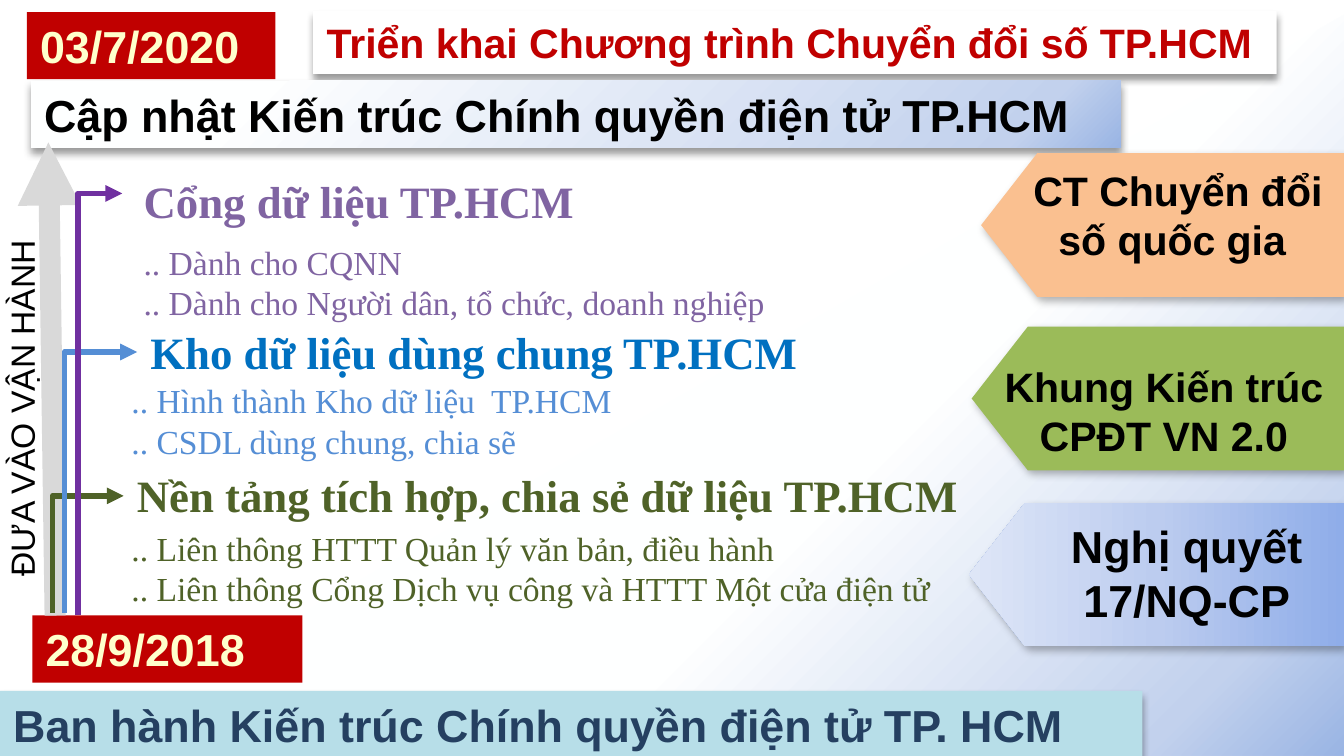
from dataclasses import dataclass

from lxml.etree import SubElement
from pptx import Presentation
from pptx.dml.color import RGBColor
from pptx.enum.shapes import MSO_CONNECTOR as CONNECTOR, MSO_SHAPE as SHAPE
from pptx.enum.text import MSO_ANCHOR as ANCHOR, MSO_AUTO_SIZE as AUTO_SIZE, PP_ALIGN as ALIGN
from pptx.oxml.ns import qn
from pptx.util import Inches, Pt

SLIDE_WIDTH = 10
SLIDE_HEIGHT = SLIDE_WIDTH * 9 / 16


@dataclass(frozen=True)
class Theme:
    sans: str = "Arial"
    serif: str = "Times New Roman"
    large: int = 24
    medium: int = 22
    small: int = 18
    black: str = "000000"
    white: str = "FFFFFF"
    red: str = "C00000"
    cream: str = "FFFFCC"
    navy: str = "254061"
    aqua: str = "B7DEE8"
    gray: str = "D9D9D9"
    purple: str = "8064A2"
    violet: str = "7030A0"
    blue: str = "0070C0"
    sky: str = "558ED5"
    olive: str = "4F6228"
    green: str = "9BBB59"
    orange: str = "FAC090"
    backdrop: tuple = ((0, "9AB5E4"), (10, "C2D1ED"), (38, "FEFFFF"))
    band: tuple = ((0, "9AB5E4"), (10, "C2D1ED"), (80, "FEFFFF"))
    plate: tuple = ((0, "8FADE9"), (50, "BCCCEF"), (100, "DEE6F7"))
    band_shadow: tuple = (40, 4, 3, 90)
    plate_shadow: tuple = (30, 4.5, 2.6, 53)


THEME = Theme()


def color(value):
    return RGBColor.from_string(value)


def set_gradient(shape, stops, linear=False):
    properties = shape.element.spPr
    gradient = SubElement(properties, qn("a:gradFill"), rotWithShape="1")
    stop_list = SubElement(gradient, qn("a:gsLst"))
    for position, value in stops:
        stop = SubElement(stop_list, qn("a:gs"), pos=str(position * 1000))
        SubElement(stop, qn("a:srgbClr"), val=value)
    if linear:
        SubElement(gradient, qn("a:lin"), ang="0", scaled="0")
    else:
        circle = SubElement(gradient, qn("a:path"), path="circle")
        SubElement(circle, qn("a:fillToRect"), l="100000", t="100000")
        SubElement(gradient, qn("a:tileRect"), r="-100000", b="-100000")
    properties.find(qn("a:prstGeom")).addnext(gradient)


def set_shadow(shape, shadow):
    shape.shadow.inherit = False
    if shadow is None:
        return
    opacity, blur, distance, angle = shadow
    effects = shape.element.spPr.find(qn("a:effectLst"))
    outer = SubElement(effects, qn("a:outerShdw"), blurRad=str(Pt(blur)),
                       dist=str(Pt(distance)), dir=str(angle * 60000), rotWithShape="0")
    black = SubElement(outer, qn("a:srgbClr"), val=THEME.black)
    SubElement(black, qn("a:alpha"), val=str(opacity * 1000))


def add_block(slide, kind, box, fill, shadow=None, linear=False):
    shape = slide.shapes.add_shape(kind, *map(Inches, box))
    shape.line.fill.background()
    set_shadow(shape, shadow)
    if isinstance(fill, str):
        shape.fill.solid()
        shape.fill.fore_color.rgb = color(fill)
    else:
        set_gradient(shape, fill, linear)
    return shape


def write_text(shape, text, size=THEME.large, font=THEME.sans, fill=THEME.black,
               bold=True, align=ALIGN.LEFT, auto_size=AUTO_SIZE.SHAPE_TO_FIT_TEXT):
    frame = shape.text_frame
    frame.text = text
    frame.word_wrap = True
    frame.auto_size = auto_size
    frame.vertical_anchor = ANCHOR.TOP
    for paragraph in frame.paragraphs:
        paragraph.alignment = align
        for run in paragraph.runs:
            run.font.size = Pt(size)
            run.font.name = font
            run.font.bold = bold
            run.font.color.rgb = color(fill)


def add_text(slide, box, text, **text_format):
    shape = slide.shapes.add_textbox(*map(Inches, box))
    write_text(shape, text, **text_format)
    return shape


def add_title(slide, box, text, **text_format):
    title = slide.shapes.title
    title.left, title.top, title.width, title.height = map(Inches, box)
    title.fill.solid()
    title.fill.fore_color.rgb = color(THEME.white)
    set_shadow(title, THEME.band_shadow)
    write_text(title, text, auto_size=AUTO_SIZE.NONE, **text_format)
    return title


def add_arrow(slide, kind, start, end, fill, width):
    arrow = slide.shapes.add_connector(kind, *map(Inches, (*start, *end)))
    arrow.line.color.rgb = color(fill)
    arrow.line.width = Pt(width)
    properties = arrow.element.spPr
    SubElement(properties.find(qn("a:ln")), qn("a:tailEnd"), type="triangle")
    SubElement(properties, qn("a:effectLst"))
    return arrow


def add_elbow_arrow(slide, start, end, fill):
    (left, bottom), (right, top) = start, end
    center_x, center_y = (left + right) / 2, (top + bottom) / 2
    half_rise, half_run = (bottom - top) / 2, (right - left) / 2
    arrow = add_arrow(slide, CONNECTOR.ELBOW,
                      (center_x + half_rise, center_y + half_run),
                      (center_x - half_rise, center_y - half_run), fill, 3)
    properties = arrow.element.spPr
    properties.find(qn("a:prstGeom")).set("prst", "bentConnector2")
    properties.find(qn("a:xfrm")).set("rot", str(90 * 60000))


def add_date(slide, box, text):
    shape = add_block(slide, SHAPE.RECTANGLE, box, THEME.red)
    write_text(shape, text, fill=THEME.cream)


def add_plate(slide, left, top, fill, text_box, text, size):
    box = (left, top, SLIDE_WIDTH - left, 1.07)
    plate = add_block(slide, SHAPE.PENTAGON, box, fill, THEME.plate_shadow, linear=True)
    plate.rotation = 180
    plate.adjustments[0] = 0.39
    add_text(slide, text_box, text, size=size, align=ALIGN.CENTER)


def add_stage(slide, heading_box, heading, heading_fill, detail_box, details, detail_fill):
    add_text(slide, heading_box, heading, font=THEME.serif, fill=heading_fill)
    add_text(slide, detail_box, "\n".join(details), size=THEME.small, font=THEME.serif,
             fill=detail_fill, bold=False)


def main():
    presentation = Presentation()
    presentation.slide_width = Inches(SLIDE_WIDTH)
    presentation.slide_height = Inches(SLIDE_HEIGHT)
    slide = presentation.slides.add_slide(presentation.slide_layouts[5])

    title = add_title(slide, (2.33, 0.08, 7.17, 0.47),
                      "Triển khai Chương trình Chuyển đổi số TP.HCM",
                      size=THEME.medium, fill=THEME.red, align=ALIGN.JUSTIFY)
    backdrop = add_block(slide, SHAPE.ISOSCELES_TRIANGLE, (0.41, 0.11, 9.59, 5.51), THEME.backdrop)
    backdrop.adjustments[0] = 1
    title.element.addprevious(backdrop.element)

    issue_band = add_block(slide, SHAPE.RECTANGLE, (0, 5.14, 8.5, 0.5), THEME.aqua, THEME.band_shadow)
    write_text(issue_band, "Ban hành Kiến trúc Chính quyền điện tử TP. HCM", fill=THEME.navy)
    update_band = add_block(slide, SHAPE.RECTANGLE, (0.23, 0.6, 8.11, 0.5), THEME.band, THEME.band_shadow)
    write_text(update_band, "Cập nhật Kiến trúc Chính quyền điện tử TP.HCM", align=ALIGN.JUSTIFY)

    add_date(slide, (0.24, 4.58, 2.01, 0.5), "28/9/2018")
    add_date(slide, (0.2, 0.09, 1.85, 0.5), "03/7/2020")

    add_arrow(slide, CONNECTOR.STRAIGHT, (0.41, 4.58), (0.36, 1.06), THEME.gray, 11.25)
    add_elbow_arrow(slide, (0.39, 4.56), (0.92, 3.69), THEME.olive)
    add_elbow_arrow(slide, (0.48, 4.56), (1.02, 2.62), THEME.sky)
    add_elbow_arrow(slide, (0.58, 4.58), (0.91, 1.44), THEME.violet)

    add_stage(slide, (0.97, 1.24, 5.67, 0.5), "Cổng dữ liệu TP.HCM", THEME.purple,
              (0.97, 1.75, 5.37, 0.71),
              (".. Dành cho CQNN", ".. Dành cho Người dân, tổ chức, doanh nghiệp"), THEME.purple)
    add_stage(slide, (1.02, 2.37, 5.65, 0.5), "Kho dữ liệu dùng chung TP.HCM", THEME.blue,
              (0.88, 2.78, 5.37, 0.71),
              (".. Hình thành Kho dữ liệu  TP.HCM", ".. CSDL dùng chung, chia sẽ"), THEME.sky)
    add_stage(slide, (0.92, 3.43, 6.5, 0.5), "Nền tảng tích hợp, chia sẻ dữ liệu TP.HCM", THEME.olive,
              (0.88, 3.88, 6.46, 0.71),
              (".. Liên thông HTTT Quản lý văn bản, điều hành",
               ".. Liên thông Cổng Dịch vụ công và HTTT Một cửa điện tử"), THEME.olive)

    add_plate(slide, 7.21, 3.74, THEME.plate, (7.83, 3.81, 2, 0.91),
              "Nghị quyết 17/NQ-CP", THEME.large)
    add_plate(slide, 7.23, 2.43, THEME.green, (7.24, 2.64, 2.84, 0.84),
              "Khung Kiến trúc CPĐT VN 2.0", THEME.medium)
    add_plate(slide, 7.3, 1.14, THEME.orange, (7.58, 1.18, 2.37, 0.84),
              "CT Chuyển đổi số quốc gia ", THEME.medium)

    operation_label = add_text(slide, (-1.26, 2.77, 2.84, 0.4), "ĐƯA VÀO VẬN HÀNH",
                               size=THEME.small, bold=False)
    operation_label.rotation = 270
    presentation.save("out.pptx")


if __name__ == "__main__":
    main()
